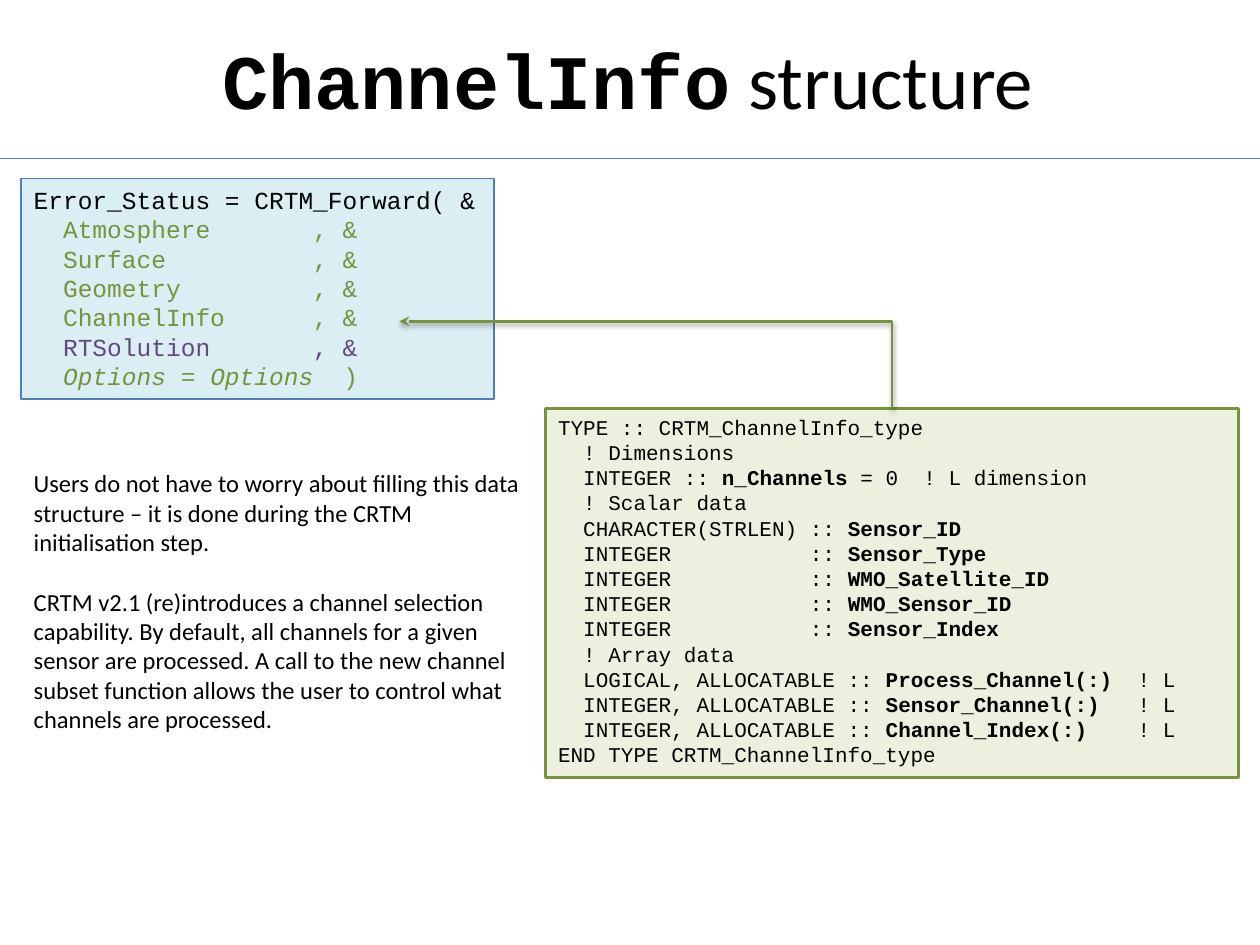
from dataclasses import dataclass

from lxml import etree
from pptx import Presentation
from pptx.dml.color import RGBColor
from pptx.enum.shapes import MSO_CONNECTOR, MSO_SHAPE
from pptx.enum.text import MSO_ANCHOR, PP_ALIGN
from pptx.oxml.ns import qn
from pptx.util import Cm, Pt

RECT = MSO_SHAPE.RECTANGLE
LINE, ELBOW = MSO_CONNECTOR.STRAIGHT, MSO_CONNECTOR.ELBOW
TOP, MIDDLE = MSO_ANCHOR.TOP, MSO_ANCHOR.MIDDLE
LEFT, CENTER = PP_ALIGN.LEFT, PP_ALIGN.CENTER


@dataclass(frozen=True)
class Theme:
    ink: str = "000000"
    blue: str = "4B7EBC"
    sky: str = "DBEEF4"
    green: str = "77933C"
    pale: str = "EBF1DE"
    plum: str = "604A7B"
    sans: str = "Calibri"
    mono: str = "Courier New"
    title: int = 44
    body: int = 14
    code: int = 12


class Deck:
    """Draws the elements of one slide in a shared style."""

    def __init__(self, slide, theme):
        self.slide = slide
        self.theme = theme

    def run(self, para, text, font, size, color):
        run = para.add_run()
        run.text = text
        run.font.name = font
        run.font.size = Pt(size)
        run.font.color.rgb = RGBColor.from_string(color)
        return run

    def area(self, box):
        shape = self.slide.shapes.add_textbox(*map(Cm, box))
        shape.text_frame.word_wrap = True
        return shape.text_frame

    def head(self, box, name, rest):
        t = self.theme
        frame = self.area(box)
        frame.vertical_anchor = MIDDLE
        para = frame.paragraphs[0]
        para.alignment = CENTER
        self.run(para, name, t.mono, t.title, t.ink).font.bold = True
        self.run(para, rest, t.sans, t.title, t.ink)

    def prose(self, box, texts, gap):
        t = self.theme
        frame = self.area(box)
        frame.text = "\n".join(texts)
        for i, para in enumerate(frame.paragraphs):
            para.space_before = Pt(gap if i else 0)
            font = para.runs[0].font
            font.name, font.size = t.sans, Pt(t.body)
            font.color.rgb = RGBColor.from_string(t.ink)

    def panel(self, box, fill, edge, width, lines, size, mark):
        shape = self.slide.shapes.add_shape(RECT, *map(Cm, box))
        shape.shadow.inherit = False
        shape.fill.solid()
        shape.fill.fore_color.rgb = RGBColor.from_string(fill)
        shape.line.color.rgb = RGBColor.from_string(edge)
        shape.line.width = Pt(width)
        frame = shape.text_frame
        frame.word_wrap = True
        frame.vertical_anchor = TOP
        for i, (text, color) in enumerate(lines):
            para = frame.add_paragraph() if i else frame.paragraphs[0]
            para.alignment = LEFT
            for j, part in enumerate(text.split("*")):
                if part:
                    run = self.run(para, part, self.theme.mono, size, color)
                    setattr(run.font, mark, j % 2 == 1)

    def line(self, kind, ends, color, width):
        link = self.slide.shapes.add_connector(kind, *map(Cm, ends))
        link.line.color.rgb = RGBColor.from_string(color)
        link.line.width = Pt(width)
        glow = etree.SubElement(link._element.spPr, qn("a:effectLst"))
        return link, glow

    def arrow(self, start, end, color, width):
        (x1, y1), (x2, y2) = start, end
        mid_x, mid_y = (x1 + x2) / 2, (y1 + y2) / 2
        dx, dy = (y1 - y2) / 2, (x1 - x2) / 2
        ends = mid_x - dx, mid_y + dy, mid_x + dx, mid_y - dy
        link, glow = self.line(ELBOW, ends, color, width)
        props = link._element.spPr
        props.find(qn("a:xfrm")).set("rot", "16200000")
        props.find(qn("a:prstGeom")).set("prst", "bentConnector2")
        etree.SubElement(props.find(qn("a:ln")), qn("a:tailEnd"), type="stealth")
        cast = etree.SubElement(
            glow, qn("a:outerShdw"), blurRad=str(Pt(3.1)), dist=str(Pt(1.6)),
            dir="5400000", rotWithShape="0")
        tint = etree.SubElement(cast, qn("a:srgbClr"), val=self.theme.ink)
        etree.SubElement(tint, qn("a:alpha"), val="38000")


def main():
    t = Theme()
    show = Presentation()
    show.slide_width, show.slide_height = Cm(25.4), Cm(19.05)
    deck = Deck(show.slides.add_slide(show.slide_layouts[6]), t)

    call = [
        ("Error_Status = CRTM_Forward( &", t.ink),
        ("  Atmosphere       , &", t.green),
        ("  Surface          , &", t.green),
        ("  Geometry         , &", t.green),
        ("  ChannelInfo      , &", t.green),
        ("  RTSolution       , &", t.plum),
        ("  *Options = Options  *)", t.green),
    ]
    kind = [
        "TYPE :: CRTM_ChannelInfo_type",
        "  ! Dimensions",
        "  INTEGER :: *n_Channels* = 0  ! L dimension",
        "  ! Scalar data",
        "  CHARACTER(STRLEN) :: *Sensor_ID*",
        "  INTEGER           :: *Sensor_Type*",
        "  INTEGER           :: *WMO_Satellite_ID*",
        "  INTEGER           :: *WMO_Sensor_ID*",
        "  INTEGER           :: *Sensor_Index*",
        "  ! Array data",
        "  LOGICAL, ALLOCATABLE :: *Process_Channel(:)*  ! L",
        "  INTEGER, ALLOCATABLE :: *Sensor_Channel(:)*   ! L",
        "  INTEGER, ALLOCATABLE :: *Channel_Index(:)*    ! L",
        "END TYPE CRTM_ChannelInfo_type",
    ]
    notes = [
        "Users do not have to worry about filling this data structure – it is "
        "done during the CRTM initialisation step.",
        "CRTM v2.1 (re)introduces a channel selection capability. By default, "
        "all channels for a given sensor are processed. A call to the new "
        "channel subset function allows the user to control what channels are "
        "processed.",
    ]

    deck.line(LINE, (0, 3.2, 25.4, 3.2), t.blue, 0.75)
    deck.head((2.92, 0, 19.48, 3.18), "ChannelInfo", " structure")
    deck.panel((0.43, 3.6, 9.53, 4.45), t.sky, t.blue, 1, call, t.body, "italic")
    deck.panel((11, 8.23, 13.97, 7.44), t.pale, t.green, 1.5,
               [(text, t.ink) for text in kind], t.code, "bold")
    deck.arrow((17.98, 8.23), (8.05, 6.48), t.green, 1.5)
    deck.prose((0.43, 9.32, 10.36, 5.51), notes, 17)
    show.save("out.pptx")


if __name__ == "__main__":
    main()
